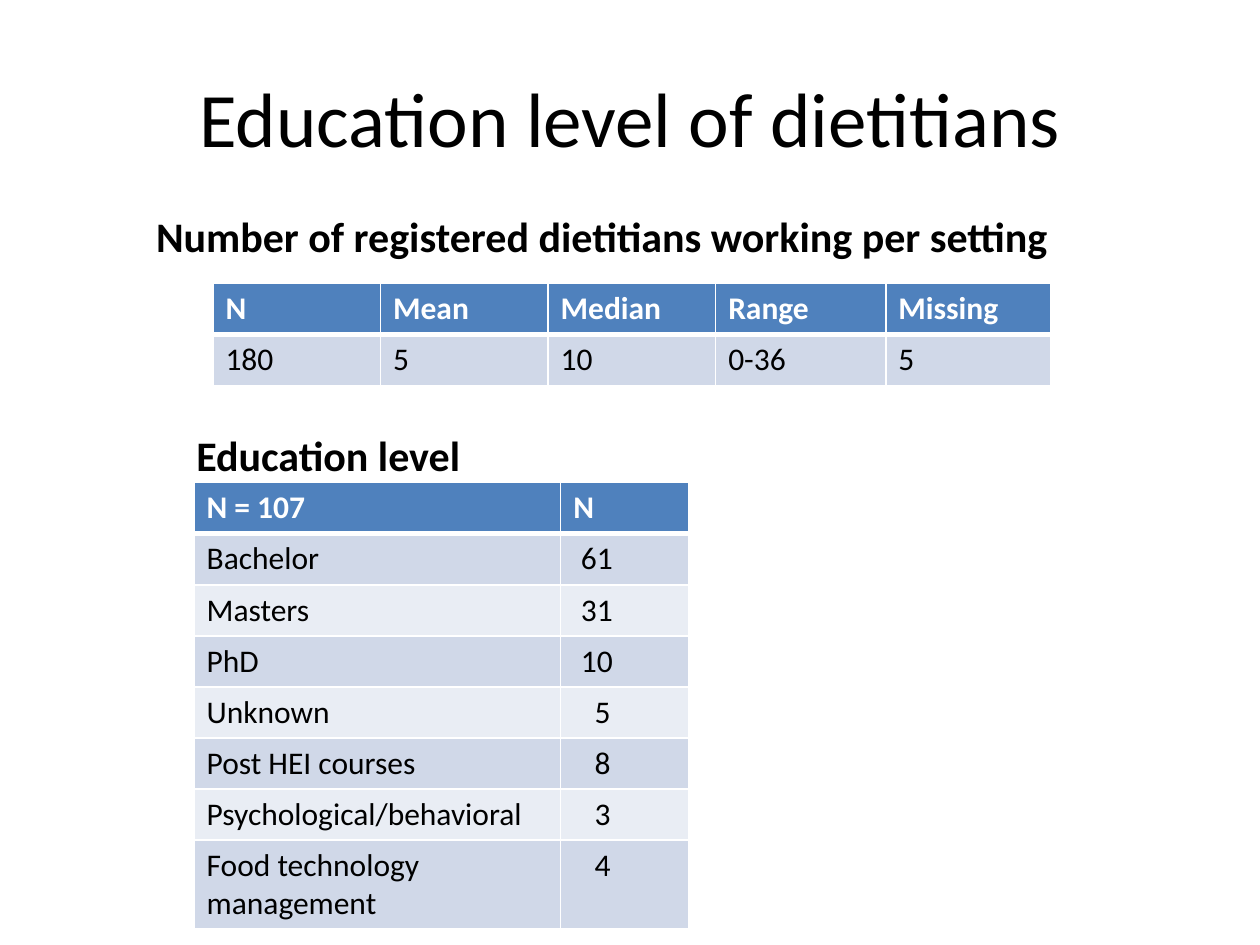
from dataclasses import dataclass

from lxml import etree
from pptx import Presentation
from pptx import util as u
from pptx.dml.color import RGBColor
from pptx.enum import text
from pptx.oxml import ns


@dataclass(frozen=True)
class Theme:
    font: str = "Calibri"
    ink: str = "000000"
    white: str = "FFFFFF"
    header: str = "4F81BD"
    bands: tuple = ("D0D8E8", "E9EDF4")
    title_size: int = 44
    heading_size: int = 24
    cell_size: int = 18
    line: float = 1
    header_line: float = 3
    row_height: float = 29.2  # points, one line of cell text plus margins


class SlideBuilder:
    def __init__(self, slide, theme):
        self.slide = slide
        self.theme = theme

    def add_run(self, para, words, size, color, bold=False):
        span = para.add_run()
        span.text = words
        span.font.name = self.theme.font
        span.font.size = u.Pt(size)
        span.font.bold = bold
        span.font.color.rgb = RGBColor.from_string(color)

    def title(self, words, left, top, width, height):
        box = self.slide.shapes.title
        box.left, box.top = u.Inches(left), u.Inches(top)
        box.width, box.height = u.Inches(width), u.Inches(height)
        box.text_frame.vertical_anchor = text.MSO_ANCHOR.MIDDLE
        para = box.text_frame.paragraphs[0]
        para.alignment = text.PP_ALIGN.CENTER
        self.add_run(para, words, self.theme.title_size, self.theme.ink)

    def heading(self, words, left, top, width, height=0.5):
        box = self.slide.shapes.add_textbox(
            u.Inches(left), u.Inches(top), u.Inches(width), u.Inches(height))
        frame = box.text_frame
        frame.word_wrap = True
        frame.auto_size = text.MSO_AUTO_SIZE.SHAPE_TO_FIT_TEXT
        self.add_run(frame.paragraphs[0], words,
                     self.theme.heading_size, self.theme.ink, bold=True)

    def borders(self, cell, top, bottom):
        """Draw all four cell edges, with the given top and bottom widths."""
        properties = cell._tc.get_or_add_tcPr()
        side = self.theme.line
        edges = (("lnL", side), ("lnR", side), ("lnT", top), ("lnB", bottom))
        for index, (tag, width) in enumerate(edges):
            line = etree.Element(ns.qn(f"a:{tag}"), w=str(u.Pt(width)))
            fill = etree.SubElement(line, ns.qn("a:solidFill"))
            etree.SubElement(fill, ns.qn("a:srgbClr"), val=self.theme.white)
            properties.insert(index, line)

    def table(self, rows, left, top, widths, indents=None):
        """Add a banded table; indents maps (row, column) to extra left margin."""
        theme = self.theme
        height = u.Pt(theme.row_height)
        table = self.slide.shapes.add_table(
            len(rows), len(widths), u.Inches(left), u.Inches(top),
            u.Inches(sum(widths)), height * len(rows)).table
        for column, width in zip(table.columns, widths):
            column.width = u.Inches(width)
        for r, values in enumerate(rows):
            table.rows[r].height = height
            is_header = r == 0
            color = theme.header if is_header else theme.bands[(r - 1) % 2]
            for c, value in enumerate(values):
                cell = table.cell(r, c)
                cell.fill.solid()
                cell.fill.fore_color.rgb = RGBColor.from_string(color)
                cell.margin_left = u.Inches(0.1 + (indents or {}).get((r, c), 0))
                self.borders(cell,
                             theme.header_line if r == 1 else theme.line,
                             theme.header_line if is_header else theme.line)
                self.add_run(cell.text_frame.paragraphs[0], value, theme.cell_size,
                             theme.white if is_header else theme.ink, is_header)
        return table


SETTING_ROWS = [
    ("N", "Mean", "Median", "Range", "Missing"),
    ("180", "5", "10", "0-36", "5"),
]
EDUCATION_ROWS = [
    ("N = 107", "N"),
    ("Bachelor", "61"),
    ("Masters", "31"),
    ("PhD", "10"),
    ("Unknown", "5"),
    ("Post HEI courses", "8"),
    ("Psychological/behavioral", "3"),
    ("Food technology management", "4"),
]


def main():
    deck = Presentation()
    deck.slide_width, deck.slide_height = u.Inches(10), u.Inches(7.5)
    title_only = deck.slide_layouts[5]
    page = SlideBuilder(deck.slides.add_slide(title_only), Theme())

    page.title("Education level of dietitians", 0.5, 0.3, 9, 1.25)
    page.table(SETTING_ROWS, 1.69, 2.25, (1.33, 1.33, 1.33, 1.35, 1.31))
    page.heading("Number of registered dietitians working per setting", 1.14, 1.62, 8.5)
    page.heading("Education level", 1.46, 3.36, 6.77)

    # Single digits sit further in, so that the counts line up on the right.
    indents = {(r, 1): 0.06 if len(count) == 2 else 0.17
               for r, (_, count) in enumerate(EDUCATION_ROWS) if r > 0}
    education = page.table(EDUCATION_ROWS, 1.54, 3.83, (2.91, 1.02), indents)
    education.rows[len(EDUCATION_ROWS) - 1].height = u.Inches(0.7)

    deck.save("out.pptx")


if __name__ == "__main__":
    main()
